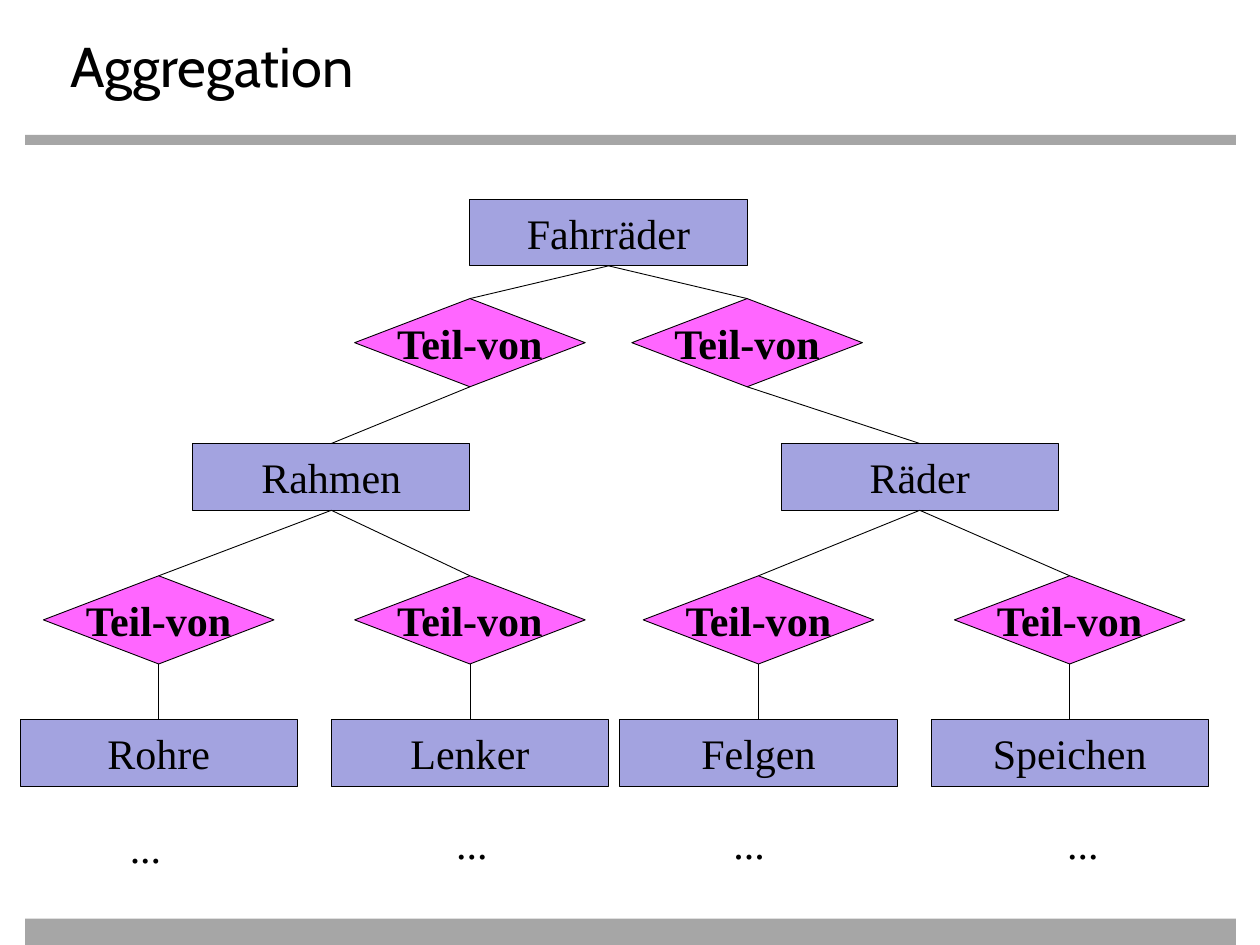
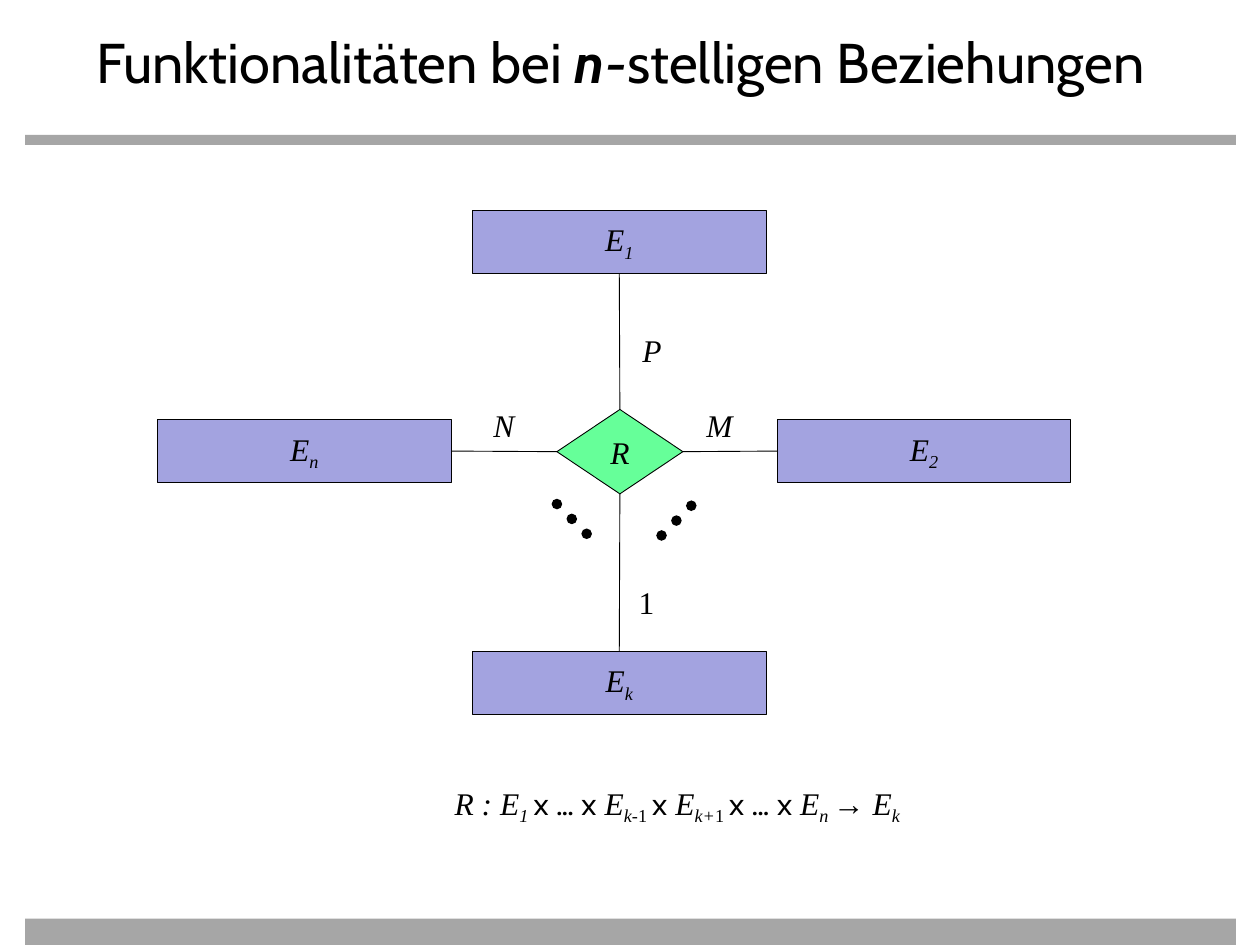
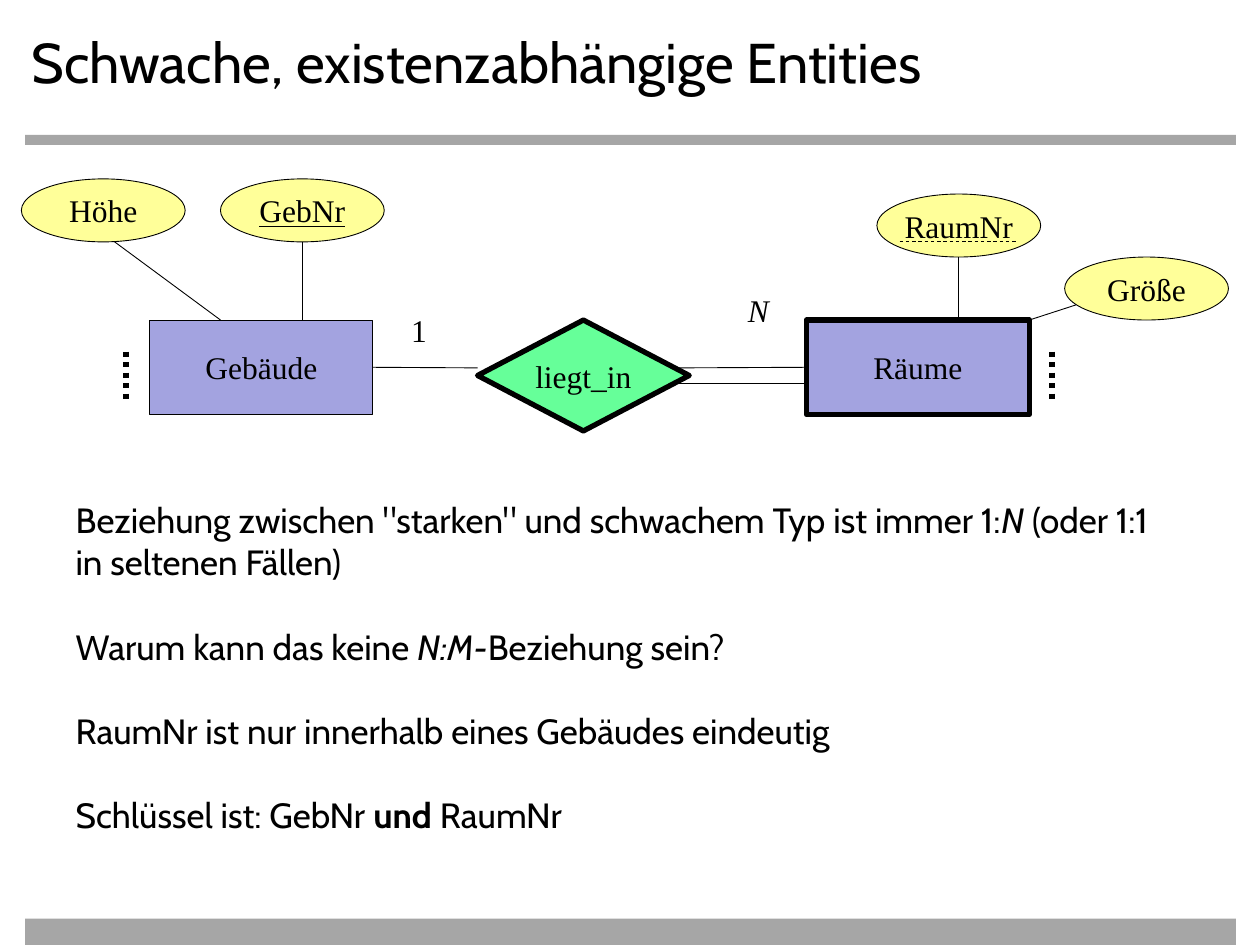
"""Build three slides on entity-relationship modelling."""
from lxml import etree
from pptx import Presentation
from pptx import util as u
from pptx.dml.color import RGBColor
from pptx.enum import dml, shapes, text
from pptx.oxml.ns import qn

COLORS = {
    "ink": "000000",
    "band": "A6A6A6",
    "entity": "A3A3E0",
    "part": "FF66FF",
    "relation": "66FF99",
    "attribute": "FFFF99",
}
TITLE_FONT = "Cabin"
DIAGRAM_FONT = "Times New Roman"
OPERATOR_FONT = "Karla"
RECTANGLE = shapes.MSO_SHAPE.RECTANGLE
DIAMOND = shapes.MSO_SHAPE.DIAMOND
ELLIPSE = shapes.MSO_SHAPE.OVAL
TOP, LEFT, BOTTOM, RIGHT = range(4)
CENTER = text.PP_ALIGN.CENTER
DOTTED = dml.MSO_LINE.ROUND_DOT
THIN, THICK = 0.5, 3


def color(name):
    """Return the named colour."""
    return RGBColor.from_string(COLORS[name])


def place(shape, left, top, width, height):
    """Move and size a shape in inches."""
    shape.left, shape.top = u.Inches(left), u.Inches(top)
    shape.width, shape.height = u.Inches(width), u.Inches(height)


def write(paragraph, pieces, size, font=DIAGRAM_FONT, align=CENTER):
    """Fill a paragraph from a string or from (text, marks) pairs: b, i, u, s for subscript, x for operator."""
    if isinstance(pieces, str):
        pieces = [(pieces, "")]
    paragraph.alignment = align
    for content, marks in pieces:
        run = paragraph.add_run()
        run.text = content
        run.font.name = OPERATOR_FONT if "x" in marks else font
        run.font.size = u.Pt(size)
        run.font.color.rgb = color("ink")
        run.font.bold = "b" in marks
        run.font.italic = "i" in marks
        run.font.underline = "u" in marks
        if "s" in marks:
            run._r.get_or_add_rPr().set("baseline", "-25000")


def add_node(slide, kind, box, pieces, fill, size=18, weight=THIN):
    """Add an outlined shape with a centred label."""
    shape = slide.shapes.add_shape(kind, *map(u.Inches, box))
    shape.shadow.inherit = False
    shape.fill.solid()
    shape.fill.fore_color.rgb = color(fill)
    shape.line.color.rgb = color("ink")
    shape.line.width = u.Pt(weight)
    frame = shape.text_frame
    frame.word_wrap = False
    frame.vertical_anchor = text.MSO_ANCHOR.MIDDLE
    write(frame.paragraphs[0], pieces, size)
    return shape


def add_label(slide, box, pieces, size=18, align=CENTER, wrap=True):
    """Add a text box with one line."""
    frame = slide.shapes.add_textbox(*map(u.Inches, box)).text_frame
    frame.word_wrap = wrap
    write(frame.paragraphs[0], pieces, size, align=align)


def add_line(slide, start=(0, 0), end=(0, 0), weight=THIN, dash=None, cap=None):
    """Add a straight line between two points in inches."""
    line = slide.shapes.add_connector(
        shapes.MSO_CONNECTOR.STRAIGHT, *map(u.Inches, (*start, *end)))
    line.line.color.rgb = color("ink")
    line.line.width = u.Pt(weight)
    if dash:
        line.line.dash_style = dash
    properties = line.element.spPr
    if cap:
        properties.find(qn("a:ln")).set("cap", cap)
    etree.SubElement(properties, qn("a:effectLst"))
    return line


def join(slide, first, first_side, second, second_side):
    """Connect the side middles of two nodes."""
    line = add_line(slide)
    line.begin_connect(first, first_side)
    line.end_connect(second, second_side)


def add_slide(presentation, layout, title, box, align=text.PP_ALIGN.LEFT):
    """Add a slide with a formatted title."""
    slide = presentation.slides.add_slide(presentation.slide_layouts[layout])
    place(slide.shapes.title, *box)
    frame = slide.shapes.title.text_frame
    frame.auto_size = text.MSO_AUTO_SIZE.NONE
    frame.vertical_anchor = text.MSO_ANCHOR.TOP
    write(frame.paragraphs[0], title, 32, TITLE_FONT, align)
    return slide


def add_master_bands(presentation, slide):
    """Draw the two grey bands and hand them to the slide master."""
    for top, height in ((1.07, 0.08), (7.29, 0.21)):
        band = slide.shapes.add_shape(
            RECTANGLE, *map(u.Inches, (0.2, top, 9.61, height)))
        band.shadow.inherit = False
        band.fill.solid()
        band.fill.fore_color.rgb = color("band")
        band.line.fill.background()
        presentation.slide_master.shapes.element.insert(2, band.element)


def add_body(slide, box, lines):
    """Fill the body placeholder with unbulleted paragraphs."""
    body = slide.placeholders[1]
    place(body, *box)
    frame = body.text_frame
    frame.auto_size = text.MSO_AUTO_SIZE.NONE
    for index, pieces in enumerate(lines):
        paragraph = frame.add_paragraph() if index else frame.paragraphs[0]
        paragraph.space_before = u.Pt(24 if index else 0)
        properties = paragraph._p.get_or_add_pPr()
        properties.set("marL", "0")
        properties.set("indent", "0")
        etree.SubElement(properties, qn("a:buNone"))
        write(paragraph, pieces, 20, TITLE_FONT, text.PP_ALIGN.LEFT)


def add_aggregation(presentation):
    """Build the part-of tree of bicycles."""
    slide = add_slide(presentation, 5, "Aggregation", (0.46, 0.2, 8.97, 0.55))
    add_master_bands(presentation, slide)

    def entity(name, center, top):
        return add_node(slide, RECTANGLE, (center - 1.1, top, 2.2, 0.53), name, "entity", 24)

    def add_part(whole, name, diamond_center, center, diamond_top, top):
        diamond = add_node(slide, DIAMOND, (diamond_center - 0.915, diamond_top, 1.83, 0.7),
                           [("Teil-von", "b")], "part", 24)
        part = entity(name, center, top)
        join(slide, whole, BOTTOM, diamond, TOP)
        join(slide, diamond, BOTTOM, part, TOP)
        return part

    root = entity("Fahrräder", 4.83, 1.58)
    branches = (
        ("Rahmen", 3.73, 2.63, (("Rohre", 1.26), ("Lenker", 3.73))),
        ("Räder", 5.93, 7.3, (("Felgen", 6.02), ("Speichen", 8.49))),
    )
    for name, diamond_center, center, leaves in branches:
        branch = add_part(root, name, diamond_center, center, 2.37, 3.52)
        for leaf, leaf_center in leaves:
            add_part(branch, leaf, leaf_center, leaf_center, 4.57, 5.71)
    for left, top in ((0.93, 6.47), (3.52, 6.44), (5.72, 6.44), (8.37, 6.44)):
        add_label(slide, (left, top, 0.45, 0.5), "...", 24, wrap=False)


def add_functionalities(presentation):
    """Build the n-ary relationship with its functionality."""
    title = [("Funktionalitäten bei ", ""), ("n", "bi"), ("-", "i"), ("stelligen Beziehungen", "")]
    slide = add_slide(presentation, 5, title, (0.44, 0.17, 8.97, 0.35), CENTER)
    relation = add_node(slide, DIAMOND, (4.42, 3.25, 1, 0.67), [("R", "i")], "relation")
    entities = (
        ("1", 3.75, 1.67, TOP, BOTTOM),
        ("n", 1.25, 3.33, LEFT, RIGHT),
        ("2", 6.17, 3.33, RIGHT, LEFT),
        ("k", 3.75, 5.17, BOTTOM, TOP),
    )
    for index, left, top, relation_side, entity_side in entities:
        entity = add_node(slide, RECTANGLE, (left, top, 2.33, 0.5),
                          [("E", "i"), (index, "is")], "entity")
        join(slide, relation, relation_side, entity, entity_side)
    for start, end in (((5.25, 4.25), (5.5, 4)), ((4.42, 4), (4.67, 4.25))):
        add_line(slide, start, end, 6, DOTTED, "rnd")
    add_label(slide, (5, 2.58, 0.67, 0.4), [("P", "i")], align=text.PP_ALIGN.LEFT)
    add_label(slide, (5.42, 3.17, 0.58, 0.4), [("M", "i")])
    add_label(slide, (3.75, 3.17, 0.5, 0.4), [("N", "i")])
    add_label(slide, (4.92, 4.58, 0.42, 0.4), "1")
    add_label(slide, (2, 6.17, 6.75, 0.4), [
        ("R : E", "i"), ("1 ", "is"), ("x ... x ", "x"),
        ("E", "i"), ("k-", "is"), ("1 ", "s"), ("x ", "x"),
        ("E", "i"), ("k+", "is"), ("1 ", "s"), ("x ... x ", "x"),
        ("E", "i"), ("n ", "is"), ("→ E", "i"), ("k", "is"),
    ])


def add_weak_entities(presentation):
    """Build the weak entity diagram and its remarks."""
    slide = add_slide(presentation, 1, "Schwache, existenzabhängige Entities", (0.15, 0.17, 10, 0.58))
    building = add_node(slide, RECTANGLE, (1.19, 2.54, 1.77, 0.75), "Gebäude", "entity")
    add_node(slide, DIAMOND, (3.79, 2.54, 1.68, 0.88), "liegt_in", "relation", weight=THICK)
    rooms = add_node(slide, RECTANGLE, (6.4, 2.54, 1.77, 0.75), "Räume", "entity", weight=THICK)
    attributes = (
        ("Höhe", "", 0.17, 1.42, (0.91, 1.92), (1.75, 2.54)),
        ("GebNr", "u", 1.75, 1.42, (2.4, 1.92), (2.4, 2.54)),
        ("RaumNr", "", 6.96, 1.54, (7.61, 2.04), (7.61, 2.54)),
        ("Größe", "", 8.45, 2.04, (8.54, 2.42), (8.17, 2.54)),
    )
    for name, marks, left, top, start, end in attributes:
        add_node(slide, ELLIPSE, (left, top, 1.3, 0.5), [(name, marks)], "attribute")
        add_line(slide, start, end)
    add_line(slide, (7.14, 1.92), (8.08, 1.92), dash=dml.MSO_LINE.DASH)
    add_line(slide, (2.96, 2.92), (3.79, 2.92)).begin_connect(building, RIGHT)
    add_line(slide, (5.38, 2.92), (6.4, 2.92)).end_connect(rooms, LEFT)
    add_line(slide, (5.38, 3.04), (6.4, 3.04))
    for x in (1, 8.35):
        add_line(slide, (x, 2.79), (x, 3.17), THICK, DOTTED)
    add_label(slide, (3.14, 2.42, 0.37, 0.4), "1")
    add_label(slide, (5.79, 2.26, 0.46, 0.4), [("N", "i")], wrap=False)
    add_body(slide, (0.5, 3.91, 8.94, 2.93), (
        [('Beziehung zwischen "starken" und schwachem Typ ist immer 1:', ""), ("N", "i"),
         (" (oder 1:1 in seltenen Fällen)", "")],
        [("Warum kann das keine ", ""), ("N:M-", "i"), ("Beziehung sein?", "")],
        "RaumNr ist nur innerhalb eines Gebäudes eindeutig",
        [("Schlüssel ist: GebNr ", ""), ("und", "b"), (" RaumNr", "")],
    ))


def main():
    """Build and save the presentation."""
    presentation = Presentation()
    presentation.slide_width, presentation.slide_height = u.Inches(10), u.Inches(7.5)
    add_aggregation(presentation)
    add_functionalities(presentation)
    add_weak_entities(presentation)
    presentation.save("out.pptx")


if __name__ == "__main__":
    main()
